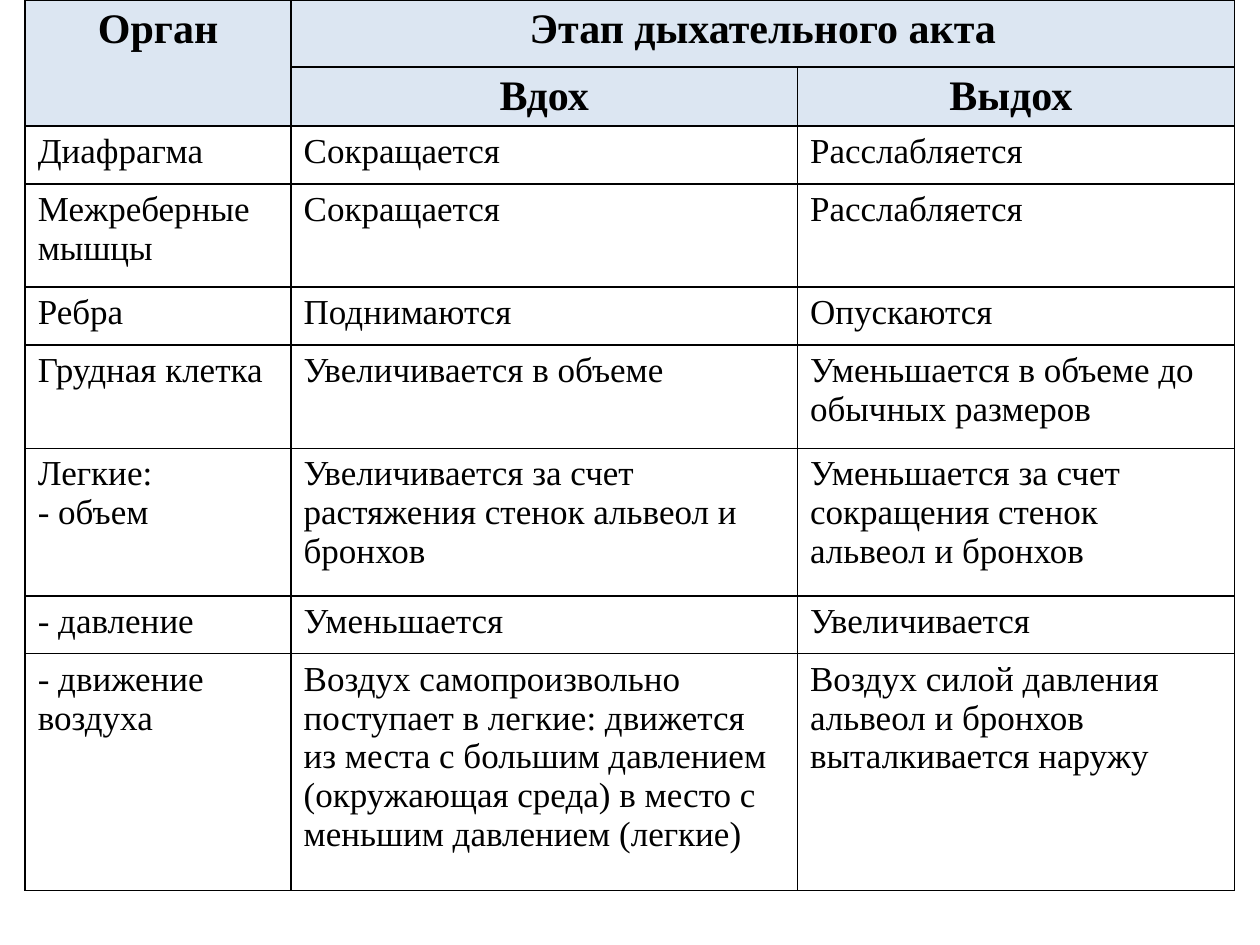
from lxml import etree
from pptx import Presentation
from pptx.dml.color import RGBColor
from pptx.enum.text import PP_ALIGN
from pptx.oxml.ns import qn
from pptx.util import Inches, Pt

CENTER, LEFT = PP_ALIGN.CENTER, PP_ALIGN.LEFT
FONT = "Times New Roman"
BLACK, HEADER_FILL = "000000", "DCE6F2"
BLANK_LAYOUT = 6
HEADER_ROWS = 2

COLUMN_WIDTHS = [2.11, 4.02, 3.47]
ROW_HEIGHTS = [0.53, 0.47, 0.46, 0.82, 0.46, 0.82, 1.17, 0.46, 1.88]

# Each line of a cell is a paragraph; empty cells are covered by merged ones
ROWS = [
    ["Орган", "Этап дыхательного акта", ""],
    ["", "Вдох", "Выдох "],
    ["Диафрагма", "Сокращается", "Расслабляется"],
    ["Межреберные мышцы", "Сокращается", "Расслабляется"],
    ["Ребра", "Поднимаются", "Опускаются"],
    ["Грудная клетка", "Увеличивается в объеме",
     "Уменьшается в объеме до обычных размеров"],
    ["Легкие:\n- объем",
     "Увеличивается за счет растяжения стенок альвеол и бронхов",
     "Уменьшается за счет сокращения стенок альвеол и бронхов"],
    ["- давление", "Уменьшается", "Увеличивается"],
    ["- движение воздуха",
     "Воздух самопроизвольно поступает в легкие: движется из места с большим "
     "давлением (окружающая среда) в место с меньшим давлением (легкие)",
     "Воздух силой давления альвеол и бронхов выталкивается наружу"],
]


def color(value):
    return RGBColor.from_string(value)


def set_borders(cell, value, width):
    """Draw a solid line on all four sides; lines precede the fill."""
    properties = cell._tc.get_or_add_tcPr()
    for index, side in enumerate(("lnL", "lnR", "lnT", "lnB")):
        line = etree.Element(qn(f"a:{side}"), w=str(Pt(width)))
        fill = etree.SubElement(line, qn("a:solidFill"))
        etree.SubElement(fill, qn("a:srgbClr"), val=value)
        properties.insert(index, line)


def write_cell(cell, text, header):
    frame = cell.text_frame
    for index, line in enumerate(text.split("\n")):
        para = frame.add_paragraph() if index else frame.paragraphs[0]
        para.alignment = CENTER if header else LEFT
        span = para.add_run()
        span.text = line
        span.font.name = FONT
        span.font.size = Pt(24 if header else 20)
        span.font.bold = header
        span.font.color.rgb = color(BLACK)


def style_cell(cell, header):
    if header:
        cell.fill.solid()
        cell.fill.fore_color.rgb = color(HEADER_FILL)
    else:
        cell.fill.background()
    set_borders(cell, BLACK, 1)


def add_breathing_table(page):
    table = page.shapes.add_table(
        len(ROWS), len(COLUMN_WIDTHS), Inches(0.2), Inches(0),
        Inches(sum(COLUMN_WIDTHS)), Inches(sum(ROW_HEIGHTS))).table
    table.first_row = table.horz_banding = False
    for column, width in zip(table.columns, COLUMN_WIDTHS):
        column.width = Inches(width)
    for row, height in zip(table.rows, ROW_HEIGHTS):
        row.height = Inches(height)

    # Two-level header
    table.cell(0, 0).merge(table.cell(1, 0))
    table.cell(0, 1).merge(table.cell(0, 2))

    # Cell contents
    for r, texts in enumerate(ROWS):
        header = r < HEADER_ROWS
        for c, text in enumerate(texts):
            cell = table.cell(r, c)
            style_cell(cell, header)
            if text:
                write_cell(cell, text, header)


def main():
    deck = Presentation()
    deck.slide_width, deck.slide_height = Inches(10), Inches(7.5)
    page = deck.slides.add_slide(deck.slide_layouts[BLANK_LAYOUT])
    add_breathing_table(page)
    deck.save("out.pptx")


if __name__ == "__main__":
    main()
